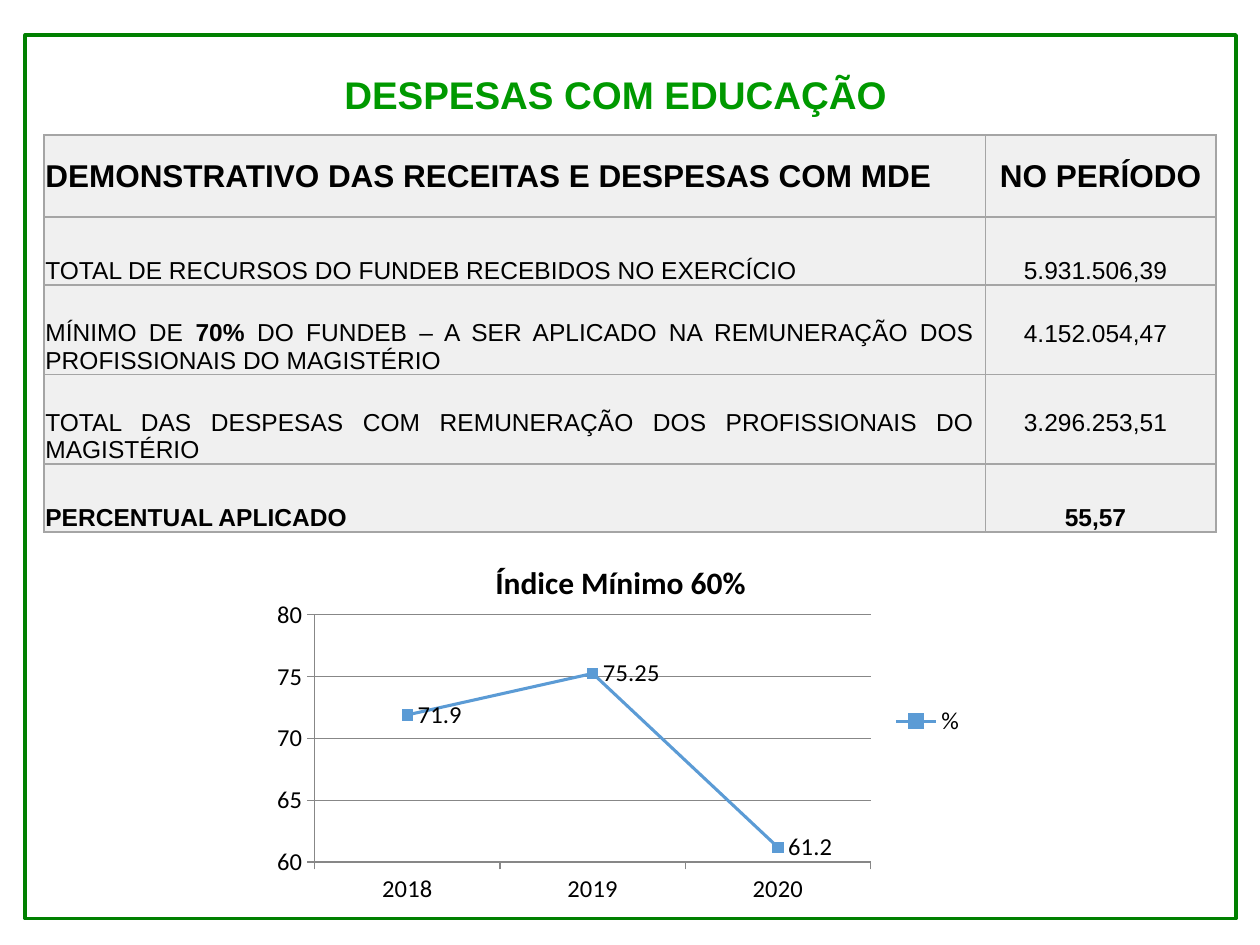
from pptx import Presentation
from pptx.chart.data import CategoryChartData
from pptx.dml.color import RGBColor
from pptx.enum.chart import XL_CHART_TYPE as ChartType, XL_LABEL_POSITION as LabelSpot
from pptx.enum.chart import XL_LEGEND_POSITION as LegendSpot, XL_MARKER_STYLE as Marker
from pptx.enum.chart import XL_TICK_MARK as Tick
from pptx.enum.shapes import MSO_SHAPE as Preset
from pptx.enum.text import MSO_ANCHOR as Anchor, PP_ALIGN as Align
from pptx.oxml import parse_xml
from pptx.oxml.ns import nsdecls
from pptx.util import Inches, Pt

COLORS = {"frame": "008000", "title": "009900", "text": "000000", "cell": "F0F0F0",
          "border": "A5A5A5", "series": "5B9BD5", "axis": "878787"}
WIDTH, HEIGHT = 10, 7.5
COLUMNS = [7.47, 1.83]
ROW_HEIGHTS = [0.65, 0.54, 0.71, 0.71, 0.54]
HEADINGS = ["DEMONSTRATIVO DAS RECEITAS E DESPESAS COM MDE", "NO PERÍODO"]
ROWS = [
    ([("TOTAL DE RECURSOS DO FUNDEB RECEBIDOS NO EXERCÍCIO", False)], "5.931.506,39"),
    ([("MÍNIMO DE ", False), ("70% ", True),
      ("DO FUNDEB – A SER APLICADO NA REMUNERAÇÃO DOS PROFISSIONAIS DO MAGISTÉRIO", False)],
     "4.152.054,47"),
    ([("TOTAL DAS DESPESAS COM REMUNERAÇÃO DOS PROFISSIONAIS DO MAGISTÉRIO", False)],
     "3.296.253,51"),
    ([("PERCENTUAL APLICADO", True)], "55,57"),
]
PLOT_AREA = {"x": 0.072, "y": 0.204, "w": 0.778, "h": 0.689}


def color(name):
    """Return a named colour."""
    return RGBColor.from_string(COLORS[name])


def place(left, top, width, height):
    """Turn shares of the slide's size into lengths."""
    return [Inches(share * side) for share, side in
            zip((left, top, width, height), (WIDTH, HEIGHT) * 2)]


def style_font(font, size, name="Calibri", bold=False, tint="text"):
    """Set the look of a font."""
    font.size, font.name, font.bold = Pt(size), name, bold
    font.color.rgb = color(tint)


def write(frame, spans, size=14, align=Align.LEFT, anchor=Anchor.BOTTOM, tint="text"):
    """Write one paragraph of (text, bold) spans."""
    frame.word_wrap = True
    para = frame.paragraphs[0]
    para.alignment = align
    for text, bold in spans:
        span = para.add_run()
        span.text = text
        style_font(span.font, size, "Arial", bold, tint)
    frame.vertical_anchor = anchor


def add_frame(page):
    """Draw the green outline."""
    box = page.shapes.add_shape(Preset.RECTANGLE, *place(0.02, 0.037, 0.961, 0.935))
    box.shadow.inherit = False
    box.fill.background()
    box.line.color.rgb = color("frame")
    box.line.width = Pt(2)


def add_title(page):
    """Add the slide's title."""
    box = page.shapes.add_textbox(*place(0.083, 0.028, 0.811, 0.103))
    write(box.text_frame, [("DESPESAS COM EDUCAÇÃO", True)], 22, Align.CENTER, tint="title")


def style_cell(cell, right=0.09, top=0.01):
    """Set margins, fill and borders of a cell."""
    cell.margin_left, cell.margin_top = Inches(0.01), Inches(top)
    cell.margin_right, cell.margin_bottom = Inches(right), 0
    cell.fill.solid()
    cell.fill.fore_color.rgb = color("cell")
    properties = cell._tc.get_or_add_tcPr()
    for index, side in enumerate("LRTB"):
        properties.insert(index, parse_xml(
            f'<a:ln{side} {nsdecls("a")} w="{Pt(1)}"><a:solidFill>'
            f'<a:srgbClr val="{COLORS["border"]}"/></a:solidFill></a:ln{side}>'))


def add_table(page):
    """Add the table of revenue and spending."""
    area = place(0.035, 0.143, 0.929, 0.42)
    table = page.shapes.add_table(len(ROW_HEIGHTS), len(COLUMNS), *area).table
    table.first_row = table.horz_banding = False
    for column, width in zip(table.columns, COLUMNS):
        column.width = Inches(width)
    for row, height in zip(table.rows, ROW_HEIGHTS):
        row.height = Inches(height)
    for index, (heading, align) in enumerate(zip(HEADINGS, (Align.LEFT, Align.CENTER))):
        cell = table.cell(0, index)
        write(cell.text_frame, [(heading, True)], 18, align)
        cell.vertical_anchor = Anchor.MIDDLE
        style_cell(cell, right=0.01)
    for index, (spans, value) in enumerate(ROWS, 1):
        label, amount = table.cell(index, 0), table.cell(index, 1)
        tall = ROW_HEIGHTS[index] > 0.6
        write(label.text_frame, spans, align=Align.JUSTIFY)
        write(amount.text_frame, [(value, spans[0][1])], align=Align.CENTER)
        label.vertical_anchor = Anchor.BOTTOM
        amount.vertical_anchor = Anchor.MIDDLE if tall else Anchor.BOTTOM
        style_cell(label)
        style_cell(amount, top=0.06 if tall else 0.01)


def style_axis(axis):
    """Set ticks, line and font of an axis."""
    axis.major_tick_mark, axis.minor_tick_mark = Tick.OUTSIDE, Tick.NONE
    axis.format.line.color.rgb = color("axis")
    axis.format.line.width = Pt(0.75)
    style_font(axis.tick_labels.font, 14)


def style_series(series):
    """Set line, markers and value labels of the series."""
    series.smooth = False
    series.format.line.color.rgb = color("series")
    series.format.line.width = Pt(1.75)
    marker = series.marker
    marker.style, marker.size = Marker.SQUARE, 6
    marker.format.fill.solid()
    marker.format.fill.fore_color.rgb = color("series")
    marker.format.line.color.rgb = color("series")
    labels = series.data_labels
    labels.show_value, labels.position = True, LabelSpot.RIGHT
    style_font(labels.font, 14)


def set_plot_area(chart):
    """Fix the inner plot area as shares of the chart."""
    plot_area = chart._chartSpace.xpath("c:chart/c:plotArea")[0]
    for layout in plot_area.xpath("c:layout"):
        plot_area.remove(layout)
    modes = "".join(f'<c:{side}Mode val="edge"/>' for side in "xy")
    sizes = "".join(f'<c:{side} val="{share}"/>' for side, share in PLOT_AREA.items())
    plot_area.insert(0, parse_xml(
        f'<c:layout {nsdecls("c")}><c:manualLayout><c:layoutTarget val="inner"/>'
        f'{modes}{sizes}</c:manualLayout></c:layout>'))


def add_chart(page):
    """Add the line chart of the yearly index."""
    data = CategoryChartData()
    data.categories = ["2018", "2019", "2020"]
    data.add_series("%", [71.9, 75.25, 61.2])
    area = place(0.209, 0.573, 0.567, 0.384)
    chart = page.shapes.add_chart(ChartType.LINE_MARKERS, *area, data).chart
    style_font(chart.font, 10)
    chart.has_title = True
    chart.chart_title.include_in_layout = False
    heading = chart.chart_title.text_frame
    heading.text = "Índice Mínimo 60%"
    style_font(heading.paragraphs[0].runs[0].font, 18, bold=True)
    chart.has_legend = True
    chart.legend.position, chart.legend.include_in_layout = LegendSpot.RIGHT, False
    style_font(chart.legend.font, 14)
    values = chart.value_axis
    for axis in (chart.category_axis, values):
        style_axis(axis)
    values.minimum_scale, values.maximum_scale, values.major_unit = 60, 80, 5
    values.has_major_gridlines = True
    values.major_gridlines.format.line.color.rgb = color("axis")
    values.major_gridlines.format.line.width = Pt(0.75)
    chart.plots[0].vary_by_categories = False
    style_series(chart.plots[0].series[0])
    set_plot_area(chart)


def main():
    """Build and save the slide."""
    deck = Presentation()
    deck.slide_width, deck.slide_height = Inches(WIDTH), Inches(HEIGHT)
    page = deck.slides.add_slide(deck.slide_layouts[6])
    for add in (add_frame, add_title, add_table, add_chart):
        add(page)
    deck.save("out.pptx")


if __name__ == "__main__":
    main()
